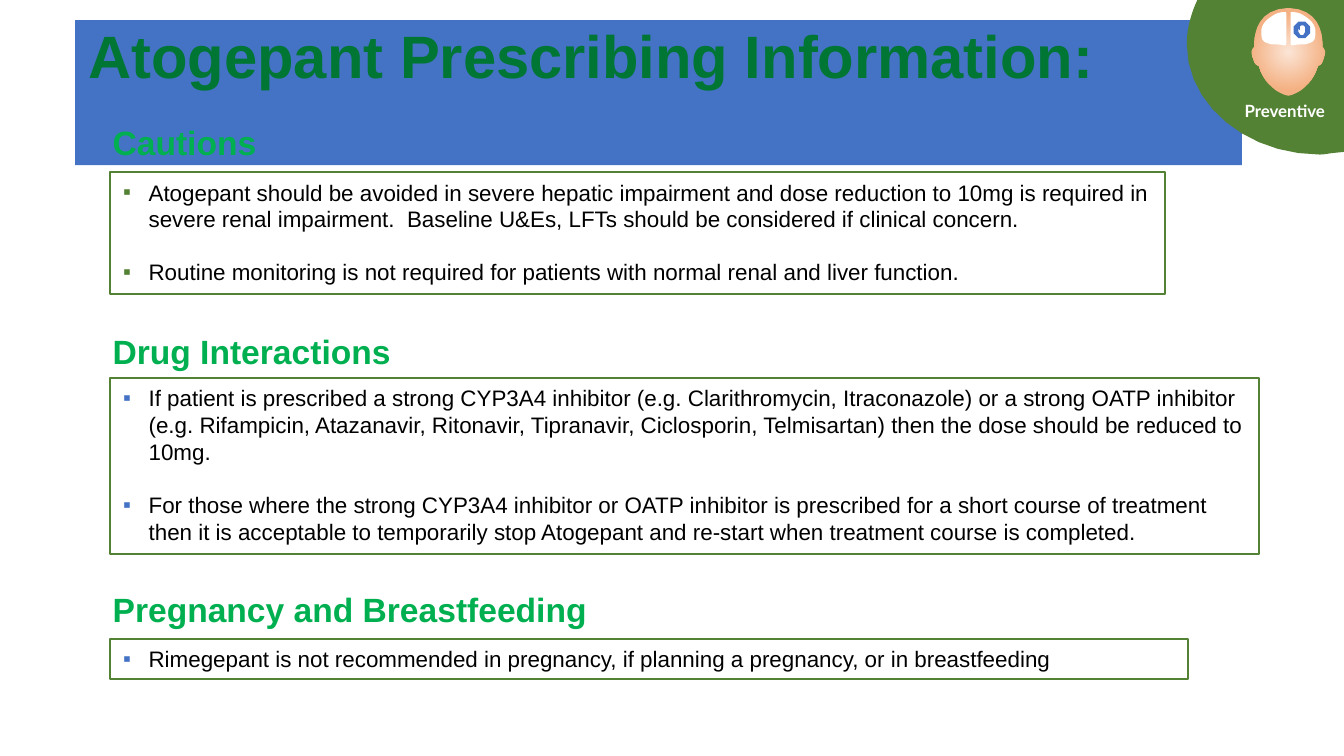
from lxml.etree import SubElement
from pptx import Presentation
from pptx.dml.color import RGBColor
from pptx.enum.shapes import MSO_SHAPE as Preset
from pptx.enum.text import MSO_ANCHOR as Anchor, PP_ALIGN as Align
from pptx.oxml.ns import qn
from pptx.util import Cm, Pt

COLOURS = {
    "banner": "4472C4", "title": "007635", "heading": "00B050", "body": "000000",
    "badge": "548235", "white": "FFFFFF", "skin_light": "FBE5D6", "skin": "F4B183",
}
SECTIONS = [
    ("Cautions", (2.18, 3.86), (3.25, 19.94, 2.31), "badge", [
        "Atogepant should be avoided in severe hepatic impairment and dose reduction to 10mg is "
        "required in severe renal impairment.  Baseline U&Es, LFTs should be considered if "
        "clinical concern.",
        "Routine monitoring is not required for patients with normal renal and liver function.",
    ]),
    ("Drug Interactions", (6.12, 8.13), (7.14, 21.72, 3.33), "banner", [
        "If patient is prescribed a strong CYP3A4 inhibitor (e.g. Clarithromycin, Itraconazole) "
        "or a strong OATP inhibitor (e.g. Rifampicin, Atazanavir, Ritonavir, Tipranavir, "
        "Ciclosporin, Telmisartan) then the dose should be reduced to 10mg.",
        "For those where the strong CYP3A4 inhibitor or OATP inhibitor is prescribed for a short "
        "course of treatment then it is acceptable to temporarily stop Atogepant and re-start "
        "when treatment course is completed.",
    ]),
    ("Pregnancy and Breastfeeding", (11, 9.73), (12.07, 20.37, 0.76), "banner", [
        "Rimegepant is not recommended in pregnancy, if planning a pregnancy, or in breastfeeding",
    ]),
]
HEAD_AXIS = 24.35
HALF_HEAD = [
    (0, 0.15), (0.71, 0.18), (0.64, 0.84), (0.64, 0.89), (0.71, 0.94), (0.71, 1.02),
    (0.66, 1.12), (0.64, 1.22), (0.58, 1.24), (0.56, 1.24), (0.46, 1.6), (0.18, 1.78), (0, 1.81),
]
BRAIN_LOBE = [
    (0.04, 0.81), (0.04, 0.84), (0.05, 0.86), (0.08, 0.86), (0.15, 0.84), (0.23, 0.84),
    (0.3, 0.84), (0.34, 0.84), (0.38, 0.82), (0.41, 0.81), (0.48, 0.79), (0.51, 0.74),
    (0.51, 0.64), (0.53, 0.48), (0.43, 0.38), (0.3, 0.3), (0.23, 0.25), (0.15, 0.23),
    (0.08, 0.23), (0.05, 0.23), (0.04, 0.23), (0.04, 0.25),
]
BADGE_EDGE = [
    (25.2, 2.89), (25.12, 2.9), (25.03, 2.92), (24.94, 2.92), (23.57, 2.92), (22.43, 1.98),
    (22.43, 0.84), (22.43, 0.56), (22.5, 0.28), (22.63, 0),
]
HAND = [
    (24.54, 0.55), (24.57, 0.58), (24.57, 0.5), (24.6, 0.48), (24.63, 0.48), (24.66, 0.51),
    (24.66, 0.61), (24.63, 0.66), (24.58, 0.66), (24.54, 0.6),
]


def rgb(name):
    """Return the colour of that name."""
    return RGBColor.from_string(COLOURS[name])


def curve(points, steps=10):
    """Trace a chain of cubic Bézier segments as a list of points."""
    traced = [points[0]]
    for start in range(0, len(points) - 1, 3):
        segment = points[start:start + 4]
        for step in range(1, steps + 1):
            t = step / steps
            weights = ((1 - t) ** 3, 3 * t * (1 - t) ** 2, 3 * t * t * (1 - t), t ** 3)
            traced.append(tuple(sum(w * p[axis] for w, p in zip(weights, segment))
                                for axis in (0, 1)))
    return traced


def around_axis(points, side=1):
    """Place points measured from the middle of the head."""
    return [(HEAD_AXIS + side * x, y) for x, y in points]


def write(paragraph, text, *, size, colour, font="Arial", bold=False, align=Align.LEFT,
          bullet=None, spacing=None, before=0):
    """Write text into a paragraph with the given format."""
    if bullet:
        properties = paragraph._p.get_or_add_pPr()
        properties.set("marL", str(Cm(0.48)))
        properties.set("indent", str(-Cm(0.48)))
        bullet_colour = SubElement(properties, qn("a:buClr"))
        SubElement(bullet_colour, qn("a:srgbClr")).set("val", COLOURS[bullet])
        SubElement(properties, qn("a:buFont")).set("typeface", "Arial")
        SubElement(properties, qn("a:buChar")).set("char", "▪")
    paragraph.alignment = align
    if spacing:
        paragraph.line_spacing = spacing
    if before:
        paragraph.space_before = Pt(before)
    run = paragraph.add_run()
    run.text = text
    run.font.name, run.font.size, run.font.bold = font, Pt(size), bold
    run.font.color.rgb = rgb(colour)


class SlideWriter:
    """Hold the style and the slide being built."""

    def __init__(self, slide):
        """Keep the slide and its text sizes."""
        self.shapes = slide.shapes
        self.title_size, self.heading_size, self.body_size = 32, 18, 12

    def panel(self, place, fill, line=None, preset=Preset.RECTANGLE):
        """Add a preset shape."""
        panel = self.shapes.add_shape(preset, *map(Cm, place))
        return self.paint(panel, fill, line)

    def paint(self, shape, fill, line=None):
        """Give a shape its fill and line."""
        shape.shadow.inherit = False
        shape.fill.solid()
        shape.fill.fore_color.rgb = rgb(fill)
        if line:
            shape.line.color.rgb = rgb(line)
            shape.line.width = Pt(1)
        else:
            shape.line.fill.background()
        return shape

    def outline(self, points, fill):
        """Add a closed freeform."""
        corners = [(Cm(x), Cm(y)) for x, y in points]
        builder = self.shapes.build_freeform(*corners[0])
        builder.add_line_segments(corners[1:], close=True)
        return self.paint(builder.convert_to_shape(), fill)

    def label(self, place, text, anchor=Anchor.TOP, **style):
        """Add a text box with one paragraph."""
        frame = self.shapes.add_textbox(*map(Cm, place)).text_frame
        frame.word_wrap = True
        frame.vertical_anchor = anchor
        write(frame.paragraphs[0], text, **style)

    def banner(self, place, text):
        """Add the title on its band."""
        frame = self.panel(place, "banner").text_frame
        frame.word_wrap = True
        frame.vertical_anchor = Anchor.TOP
        write(frame.paragraphs[0], text, size=self.title_size, colour="title", bold=True,
              spacing=0.9)

    def section(self, heading, heading_place, box_place, bullet, points):
        """Add a heading and its framed bullet list."""
        top, width = heading_place
        self.label((1.88, top, width, 1.02), heading, size=self.heading_size,
                   colour="heading", bold=True)
        frame = self.panel((2.08, *box_place), "white", "badge").text_frame
        frame.word_wrap = True
        frame.vertical_anchor = Anchor.TOP
        for index, point in enumerate(points):
            paragraph = frame.paragraphs[0] if index == 0 else frame.add_paragraph()
            write(paragraph, point, size=self.body_size, colour="body", bullet=bullet,
                  before=14 if index else 0)

    def head(self):
        """Add the head with its radial shading."""
        right = curve(HALF_HEAD)
        left = [(-x, y) for x, y in reversed(right)]
        head = self.outline(around_axis(right + left[1:-1]), "skin")
        head.fill.gradient()
        for stop, colour, position in zip(head.fill.gradient_stops, ("skin_light", "skin"),
                                          (0, 0.67)):
            stop.color.rgb = rgb(colour)
            stop.position = position
        gradient = head._element.spPr.find(qn("a:gradFill"))
        gradient.remove(gradient.find(qn("a:lin")))
        shading = SubElement(gradient, qn("a:path"))
        shading.set("path", "circle")
        centre = SubElement(shading, qn("a:fillToRect"))
        for side in "ltrb":
            centre.set(side, "50000")

    def badge(self, text):
        """Add the corner badge with the head and its caption."""
        self.outline([(25.4, 0), (25.4, 2.87)] + curve(BADGE_EDGE), "badge")
        self.head()
        for side in (-1, 1):
            self.outline(around_axis(curve(BRAIN_LOBE), side), "white")
        self.panel((24.45, 0.41, 0.31, 0.31), "banner", preset=Preset.OCTAGON)
        self.outline(HAND, "white")
        self.label((23.16, 1.57, 2.24, 1.04), text, anchor=Anchor.MIDDLE, size=9,
                   colour="white", font="Lato", bold=True, align=Align.CENTER)


def main():
    """Build and save the slide."""
    deck = Presentation()
    deck.slide_width, deck.slide_height = Cm(25.4), Cm(14.28)
    writer = SlideWriter(deck.slides.add_slide(deck.slide_layouts[6]))
    writer.banner((1.42, 0.38, 22.05, 2.74), "Atogepant Prescribing Information:")
    for section in SECTIONS:
        writer.section(*section)
    writer.badge("Preventive")
    deck.save("out.pptx")


if __name__ == "__main__":
    main()
